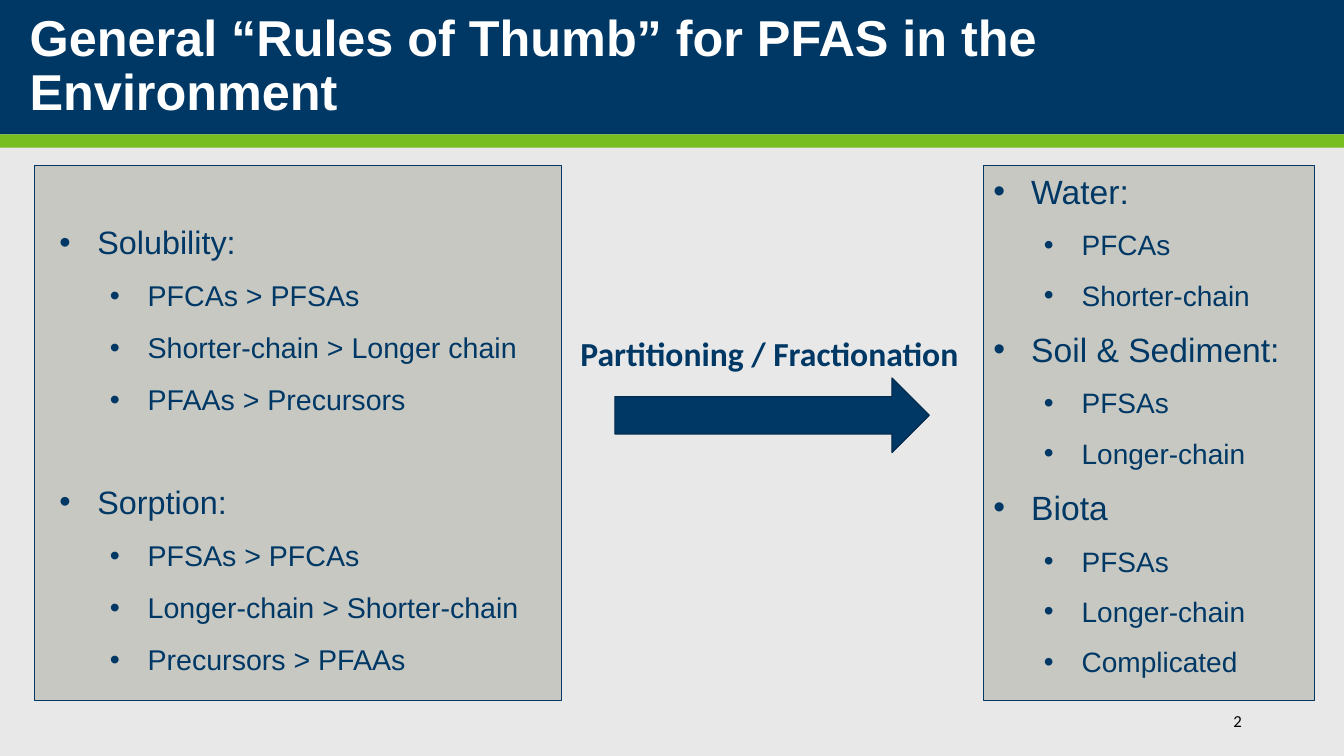
from lxml import etree
from pptx import Presentation
from pptx.dml.color import RGBColor
from pptx.enum import shapes, text
from pptx.oxml.ns import qn
from pptx.util import Pt

NAVY = RGBColor(0x00, 0x38, 0x65)
DARK_NAVY = RGBColor(0x00, 0x29, 0x4B)
GREEN = RGBColor(0x78, 0xBE, 0x21)
STONE = RGBColor(0xC8, 0xC8, 0xC3)
PALE = RGBColor(0xE8, 0xE8, 0xE8)
WHITE = RGBColor(0xFF, 0xFF, 0xFF)
BLACK = RGBColor(0x00, 0x00, 0x00)

RULES = [
    ("Solubility:", ["PFCAs > PFSAs", "Shorter-chain > Longer chain", "PFAAs > Precursors"]),
    ("Sorption:", ["PFSAs > PFCAs", "Longer-chain > Shorter-chain", "Precursors > PFAAs"]),
]
MEDIA = [
    ("Water:", ["PFCAs", "Shorter-chain"]),
    ("Soil & Sediment:", ["PFSAs", "Longer-chain"]),
    ("Biota", ["PFSAs", "Longer-chain", "Complicated"]),
]


def add_block(page, kind, box, fill, line=None, line_width=0.75):
    """Add a plain filled shape; box is left, top, width, height in points."""
    block = page.shapes.add_shape(kind, *map(Pt, box))
    block.shadow.inherit = False
    block.fill.solid()
    block.fill.fore_color.rgb = fill
    if line is None:
        block.line.fill.background()
    else:
        block.line.color.rgb = line
        block.line.width = Pt(line_width)
    return block


def style(para, font, size, colour, bold=False):
    for span in para.runs:
        span.font.name = font
        span.font.size = Pt(size)
        span.font.color.rgb = colour
        span.font.bold = bold


def add_label(page, box, words, size, colour, bold=False, wrap=True):
    label = page.shapes.add_textbox(*map(Pt, box))
    label.text_frame.word_wrap = wrap
    label.text_frame.text = words
    style(label.text_frame.paragraphs[0], "Calibri", size, colour, bold)
    return label


def add_bullet(para, level):
    para.level = level
    properties = para._p.get_or_add_pPr()
    properties.set("marL", str(Pt(27 + 36 * level)))
    properties.set("indent", str(Pt(-27)))
    colour = etree.SubElement(properties, qn("a:buClr"))
    etree.SubElement(colour, qn("a:srgbClr"), val=str(NAVY))
    etree.SubElement(properties, qn("a:buFont"), typeface="Arial")
    etree.SubElement(properties, qn("a:buChar"), char="•")


def add_header(page, box, words):
    """Navy banner with a green rule below and the title on top."""
    left, top, width, height = box
    title = page.shapes.title
    for band, fill in [(box, NAVY), ((left, top + height, width, 9.4), GREEN)]:
        bar = add_block(page, shapes.MSO_SHAPE.RECTANGLE, band, fill)
        title.element.addprevious(bar.element)
    title.left, title.top = Pt(left + 14), Pt(top + 12)
    title.width, title.height = Pt(width - 22.5), Pt(72)
    frame = title.text_frame
    frame.word_wrap = True
    frame.auto_size = text.MSO_AUTO_SIZE.NONE
    frame.vertical_anchor = text.MSO_ANCHOR.MIDDLE
    frame.text = words
    para = frame.paragraphs[0]
    para.alignment = text.PP_ALIGN.LEFT
    para.line_spacing = 0.9
    style(para, "Arial", 36, WHITE, bold=True)


def add_panel(page, box, groups, sizes, before, after, group_gap, spacing, insets):
    """Outlined panel of bulleted groups; sizes are for heading and item."""
    panel = add_block(page, shapes.MSO_SHAPE.RECTANGLE, box, STONE, NAVY)
    frame = panel.text_frame
    frame.word_wrap = True
    frame.vertical_anchor = text.MSO_ANCHOR.TOP
    frame.margin_left, frame.margin_top, frame.margin_right, frame.margin_bottom = map(Pt, insets)
    rows = [(level, words) for heading, items in groups
            for level, words in [(0, heading)] + [(1, item) for item in items]]
    for number, (level, words) in enumerate(rows):
        para = frame.add_paragraph() if number else frame.paragraphs[0]
        para.text = words
        para.alignment = text.PP_ALIGN.LEFT
        para.line_spacing = spacing
        para.space_before = Pt(0 if number == 0 else before if level else group_gap)
        para.space_after = Pt(after)
        add_bullet(para, level)
        style(para, "Arial", sizes[level], NAVY)


def add_process(page, box):
    """Caption above a block arrow."""
    left, top, width, height = box
    add_block(page, shapes.MSO_SHAPE.RIGHT_ARROW,
              (left + 31.7, top + 36, 224.6, height - 36), NAVY, DARK_NAVY, 0.85)
    caption = add_label(page, (left, top, width, 36), "Partitioning / Fractionation",
                        24, NAVY, bold=True, wrap=False)
    caption.text_frame.auto_size = text.MSO_AUTO_SIZE.SHAPE_TO_FIT_TEXT


def add_page_number(page, box, number):
    label = add_label(page, box, number, 12, BLACK)
    label.text_frame.vertical_anchor = text.MSO_ANCHOR.MIDDLE
    label.text_frame.paragraphs[0].alignment = text.PP_ALIGN.RIGHT


def main():
    deck = Presentation()
    deck.slide_width, deck.slide_height = Pt(960), Pt(540)
    page = deck.slides.add_slide(deck.slide_layouts[5])
    page.background.fill.solid()
    page.background.fill.fore_color.rgb = PALE

    add_header(page, (0, 0, 960, 96), "General “Rules of Thumb” for PFAS in the Environment")
    add_panel(page, (24.5, 118.5, 376.5, 382), RULES, sizes=(23.1, 20.4), before=5, after=10,
              group_gap=39.5, spacing=0.9, insets=(18, 43.2, 21.6, 3.6))
    add_page_number(page, (779, 500.5, 115.2, 28.8), "2")
    add_process(page, (407.5, 234, 288, 89.3))
    add_panel(page, (702.5, 118.5, 236.5, 382), MEDIA, sizes=(24, 20), before=6, after=6,
              group_gap=6, spacing=1.0, insets=(7.2, 3.6, 7.2, 3.6))
    deck.save("out.pptx")


if __name__ == "__main__":
    main()
